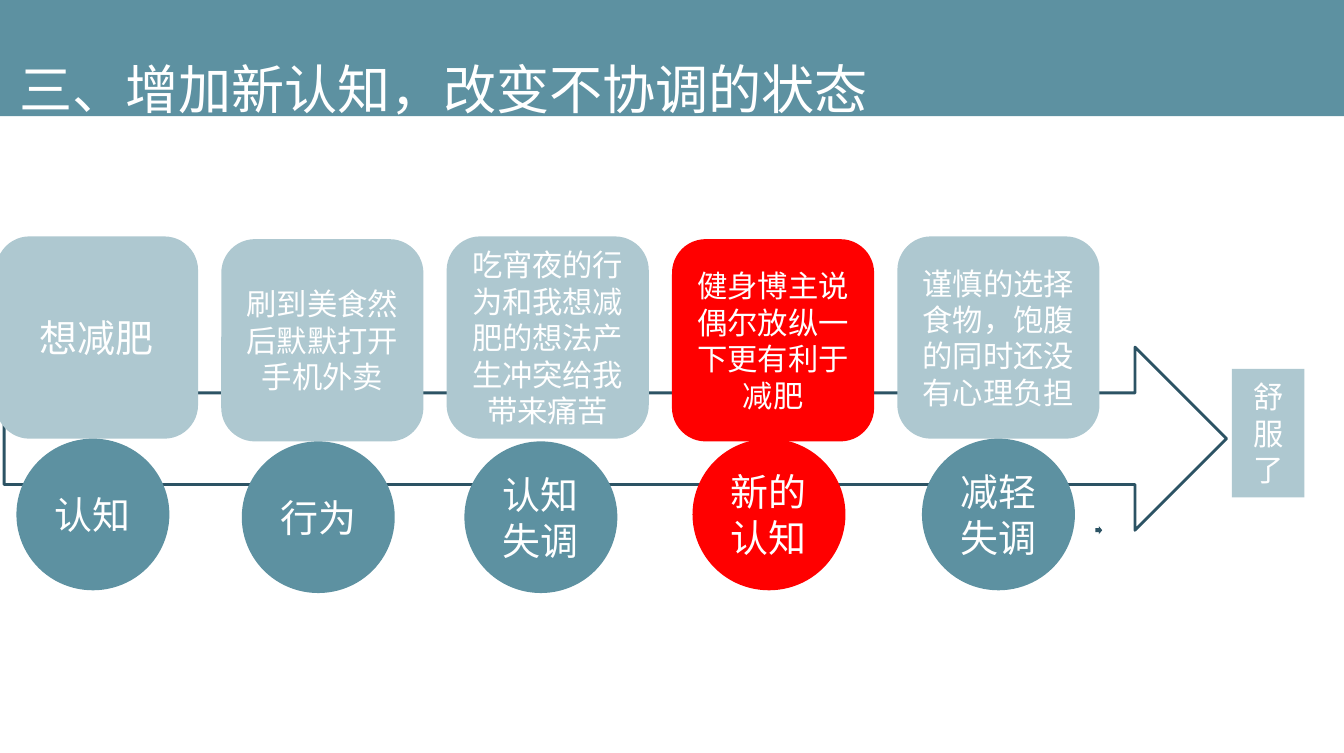
from pptx import Presentation
from pptx.dml.color import RGBColor
from pptx.enum.shapes import MSO_SHAPE
from pptx.enum.text import MSO_ANCHOR, MSO_AUTO_SIZE, PP_ALIGN
from pptx.util import Inches, Pt

TEAL, PALE, NAVY, RED, WHITE = "5D91A1", "AEC8D0", "2C5364", "FF0000", "FFFFFF"
NOTO = "Noto Sans CJK JP"


def paint(format, color):
    format.solid()
    format.fore_color.rgb = RGBColor.from_string(color)


def write(shape, text, size, font=NOTO, align=PP_ALIGN.CENTER, **frame):
    body = shape.text_frame
    body.text = text
    look = {"word_wrap": True, "auto_size": MSO_AUTO_SIZE.NONE,
            "vertical_anchor": MSO_ANCHOR.MIDDLE, **frame}
    para = body.paragraphs[0]
    jobs = [
        (body, look),
        (para, {"alignment": align, "line_spacing": Pt(size * 1.2)}),
        (para.runs[0].font, {"name": font, "size": Pt(size), "bold": False}),
    ]
    for target, values in jobs:
        for name, value in values.items():
            setattr(target, name, value)
    paint(para.runs[0].font.fill, WHITE)


deck = Presentation()
deck.slide_width, deck.slide_height = Inches(9.84), Inches(5.51)
slide = deck.slides.add_slide(deck.slide_layouts[5])
shapes = slide.shapes

title = shapes.title
place = {"left": 0.04, "top": 0.07, "width": 6.64, "height": 0.77}
for name, value in place.items():
    setattr(title, name, Inches(value))
write(title, "三、增加新认知，改变不协调的状态", 28, align=PP_ALIGN.LEFT,
      vertical_anchor=MSO_ANCHOR.TOP, margin_top=Inches(0.34))

ROUND, OVAL = MSO_SHAPE.ROUNDED_RECTANGLE, MSO_SHAPE.OVAL
RECT, ARROW = MSO_SHAPE.RECTANGLE, MSO_SHAPE.RIGHT_ARROW

steps = [
    ("想减肥", 20, 1.73, PALE, "认知", 0.12, 3.21, TEAL),
    ("刷到美食然后默默打开手机外卖", 16, 1.75, PALE, "行为", 1.77, 3.23, TEAL),
    ("吃宵夜的行为和我想减肥的想法产生冲突给我带来痛苦", 16, 1.73, PALE,
     "认知失调", 3.4, 3.23, TEAL),
    ("健身博主说偶尔放纵一下更有利于减肥", 16, 1.75, RED,
     "新的认知", 5.07, 3.21, RED),
    ("谨慎的选择食物，饱腹的同时还没有心理负担", 16, 1.73, PALE,
     "减轻失调", 6.75, 3.21, TEAL),
]

parts = [
    (RECT, (0, 0, 9.84, 0.85), TEAL, None),
    (ARROW, (0.03, 2.54, 8.95, 1.34), None, None),
    (ARROW, (8.02, 3.85, 0.05, 0.06), NAVY, None),
]
for i, (note, size, top, tint, label, left, low, shade) in enumerate(steps):
    parts += [
        (ROUND, (-0.03 + 1.65 * i, top, 1.48, 1.48), tint, (note, size)),
        (OVAL, (left, low, 1.12, 1.11), shade, (label, 20, "Arial")),
    ]
parts.append((RECT, (9.02, 2.7, 0.53, 0.94), PALE, ("舒服了", 16)))

for kind, box, color, text in parts:
    shape = shapes.add_shape(kind, *map(Inches, box))
    shape.shadow.inherit = False
    if color:
        paint(shape.fill, color)
        shape.line.fill.background()
    else:
        shape.fill.background()
        paint(shape.line.fill, NAVY)
        shape.line.width = Pt(1.5)
    if text:
        write(shape, *text)

tree = title._element.getparent()
tree.insert(tree.index(title._element) + 1, title._element.getnext())
tree.insert(tree.index(title._element), title._element.getnext())

deck.save("out.pptx")
